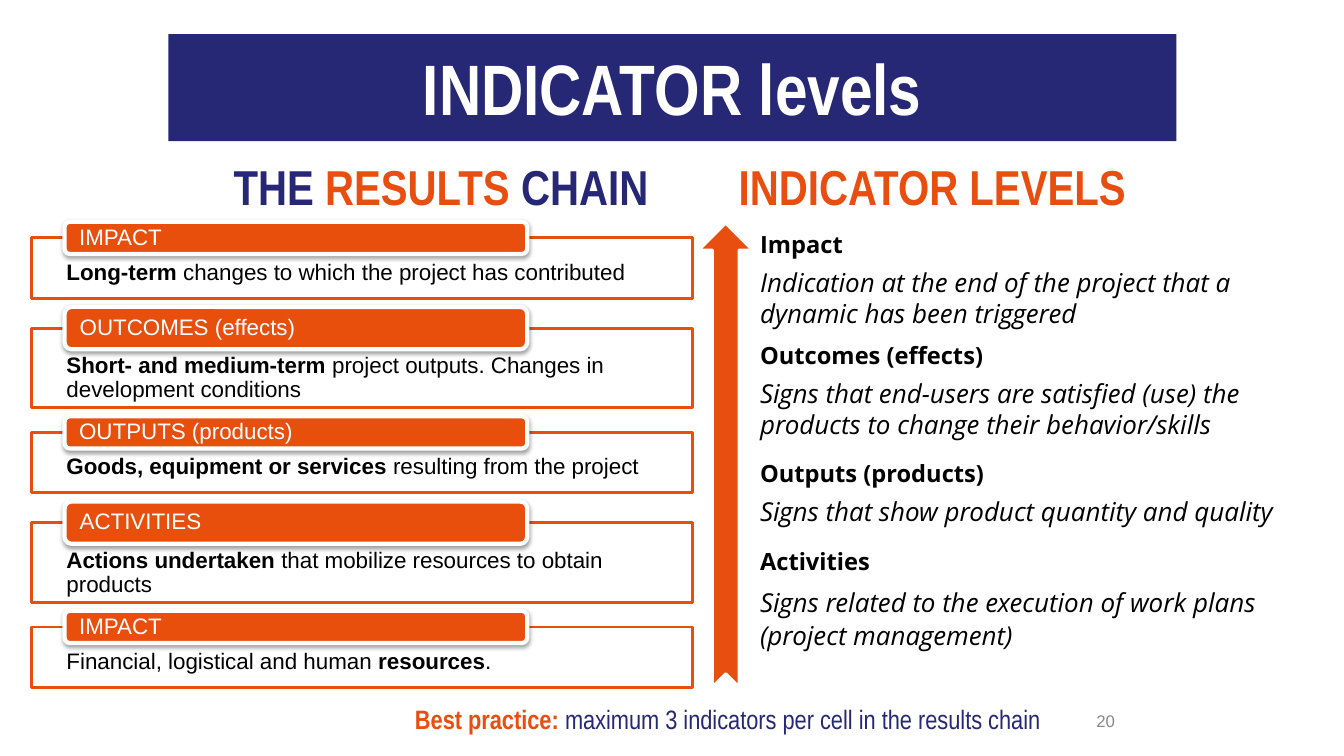
import pptx
import pptx.util
import pptx.dml.color
import pptx.enum.shapes
import pptx.enum.text
import pptx.oxml

# Grid: columns and rows of a tenth of an inch
COLUMNS, ROWS = 133.33, 75
NAVY, ORANGE, TAB_ORANGE = "262775", "E84E0F", "E84E0C"
WHITE, BLACK, GREY = "FFFFFF", "000000", "888888"
NARROW, SANS, BODY = "Arial Narrow", "Arial", "Open Sans"

SHAPES = pptx.enum.shapes.MSO_SHAPE
ALIGN = pptx.enum.text.PP_ALIGN
ANCHOR = pptx.enum.text.MSO_ANCHOR
DRAWING = 'xmlns:a="http://schemas.openxmlformats.org/drawingml/2006/main"'
TAB_SHADOW = (
    f'<a:effectLst {DRAWING}><a:outerShdw blurRad="39370" dist="20320" dir="5400000" '
    'rotWithShape="0"><a:srgbClr val="000000"><a:alpha val="36000"/></a:srgbClr>'
    '</a:outerShdw></a:effectLst>'
)

# Results chain: label, whether the text takes two lines, runs (text, bold)
CHAIN = [
    ("IMPACT", False,
     [("Long-term ", True), ("changes to which the project has contributed", False)]),
    ("OUTCOMES (effects)", True,
     [("Short- and medium-term ", True),
      ("project outputs. Changes in development conditions", False)]),
    ("OUTPUTS (products)", False,
     [("Goods, equipment or services ", True), ("resulting from the project", False)]),
    ("ACTIVITIES", True,
     [("Actions undertaken ", True), ("that mobilize resources to obtain products", False)]),
    ("IMPACT", False,
     [("Financial, logistical and human ", False), ("resources", True), (".", False)]),
]

# Indicator levels: top row, height, line spacing, heading, description
LEVELS = [
    (22.8, 10, 1, "Impact",
     "Indication at the end of the project that a dynamic has been triggered"),
    (33.8, 10, 1, "Outcomes (effects)",
     "Signs that end-users are satisfied (use) the products to change their behavior/skills"),
    (45.5, 6.8, 1, "Outputs (products)",
     "Signs that show product quantity and quality"),
    (54.1, 10.4, 1.07, "Activities",
     "Signs related to the execution of work plans (project management)"),
]


def grid(count):
    return pptx.util.Inches(count / 10)


def color(hex_string):
    return pptx.dml.color.RGBColor.from_string(hex_string)


def prepare_frame(shape, insets, anchor=ANCHOR.TOP):
    frame = shape.text_frame
    frame.word_wrap = True
    frame.vertical_anchor = anchor
    (frame.margin_left, frame.margin_top,
     frame.margin_right, frame.margin_bottom) = map(grid, insets)
    return frame


def add_run(paragraph, text, size, font, hex_string, bold=False, italic=False):
    run = paragraph.add_run()
    run.text = text
    run.font.size = pptx.util.Pt(size)
    run.font.name = font
    run.font.bold = bold
    run.font.italic = italic
    run.font.color.rgb = color(hex_string)


def add_shape(slide, kind, place, fill, line=None, line_width=0):
    shape = slide.shapes.add_shape(kind, *map(grid, place))
    shape.shadow.inherit = False
    shape.fill.solid()
    shape.fill.fore_color.rgb = color(fill)
    if line:
        shape.line.color.rgb = color(line)
        shape.line.width = pptx.util.Pt(line_width)
    else:
        shape.line.fill.background()
    return shape


def add_line_of_text(slide, place, runs, size, font=NARROW, align=ALIGN.CENTER,
                     anchor=ANCHOR.MIDDLE, spacing=1):
    """Runs are given as (text, colour, bold)."""
    box = slide.shapes.add_textbox(*map(grid, place))
    paragraph = prepare_frame(box, (1, 0.5, 1, 0.5), anchor).paragraphs[0]
    paragraph.alignment = align
    paragraph.line_spacing = spacing
    for text, hex_string, bold in runs:
        add_run(paragraph, text, size, font, hex_string, bold)


def add_banner(slide):
    banner = add_shape(slide, SHAPES.RECTANGLE, (16.7, 3.4, 100, 10.6), NAVY)
    paragraph = prepare_frame(banner, (1, 1, 1, 1)).paragraphs[0]
    paragraph.alignment = ALIGN.CENTER
    add_run(paragraph, "INDICATOR levels", 51, NARROW, WHITE, True)


def add_chain_step(slide, top, label, two_lines, runs):
    """Draws a framed text with its tab and returns the bottom row."""
    offset, height, tab_height, inset = (2.1, 7.9, 4.2, 2.6) if two_lines else (1.6, 6, 3.2, 2.3)

    frame_shape = add_shape(slide, SHAPES.RECTANGLE, (3.1, top + offset, 65.6, height),
                            WHITE, TAB_ORANGE, 2)
    fill_color = frame_shape.fill._xPr.solidFill[0]
    fill_color.append(pptx.oxml.parse_xml(f'<a:alpha {DRAWING} val="89000"/>'))
    paragraph = prepare_frame(frame_shape, (3.5, inset, 3.5, 0.5)).paragraphs[0]
    paragraph.alignment = ALIGN.LEFT
    paragraph.line_spacing = 0.9
    for text, bold in runs:
        add_run(paragraph, text, 16, SANS, BLACK, bold)

    tab = add_shape(slide, SHAPES.ROUNDED_RECTANGLE, (6.4, top, 45.9, tab_height),
                    TAB_ORANGE, WHITE, 3)
    properties = tab._element.spPr
    properties.remove(properties[-1])
    properties.append(pptx.oxml.parse_xml(TAB_SHADOW))
    paragraph = prepare_frame(tab, (1.3, 0, 1.3, 0), ANCHOR.MIDDLE).paragraphs[0]
    paragraph.alignment = ALIGN.LEFT
    paragraph.line_spacing = 0.9
    add_run(paragraph, label, 16, SANS, WHITE)
    return top + offset + height


def add_level(slide, top, height, spacing, heading, description):
    box = slide.shapes.add_textbox(*map(grid, (75.4, top, 56.5, height)))
    frame = prepare_frame(box, (0, 0, 0, 0))
    title, detail = frame.paragraphs[0], frame.add_paragraph()
    title.line_spacing = detail.line_spacing = spacing
    detail.space_before = pptx.util.Pt(6)
    add_run(title, heading, 16.9, BODY, BLACK, bold=True)
    add_run(detail, description, 18.6, BODY, BLACK, italic=True)


def main():
    presentation = pptx.Presentation()
    presentation.slide_width = grid(COLUMNS)
    presentation.slide_height = grid(ROWS)
    slide = presentation.slides.add_slide(presentation.slide_layouts[6])

    # Banner and column headings
    add_banner(slide)
    add_line_of_text(slide, (21.9, 15.9, 44.8, 5.1),
                     [("THE ", NAVY, True), ("RESULTS", ORANGE, True),
                      (" CHAIN ", NAVY, True)], 35)
    add_line_of_text(slide, (70.1, 15.9, 44.8, 5.1),
                     [("INDICATOR LEVELS", ORANGE, True)], 35)

    # Upward arrow between the columns
    arrow = add_shape(slide, SHAPES.NOTCHED_RIGHT_ARROW, (49, 42.5, 46, 5.3),
                      ORANGE, WHITE, 2)
    arrow.rotation = 270

    # Results chain, stacked with equal gaps
    top, gap = 22, 0.85
    for step in CHAIN:
        top = add_chain_step(slide, top, *step) + gap

    # Indicator levels
    for level in LEVELS:
        add_level(slide, *level)

    # Best practice and slide number
    add_line_of_text(slide, (38, 69.6, 69, 3.9),
                     [("Best practice: ", ORANGE, True),
                      ("maximum 3 indicators per cell in the results chain ", NAVY, False)],
                     19, anchor=ANCHOR.TOP, spacing=0.9)
    add_line_of_text(slide, (88.3, 69.5, 23.3, 4), [("20", GREY, False)],
                     12, SANS, ALIGN.RIGHT)

    presentation.save("out.pptx")


if __name__ == "__main__":
    main()
